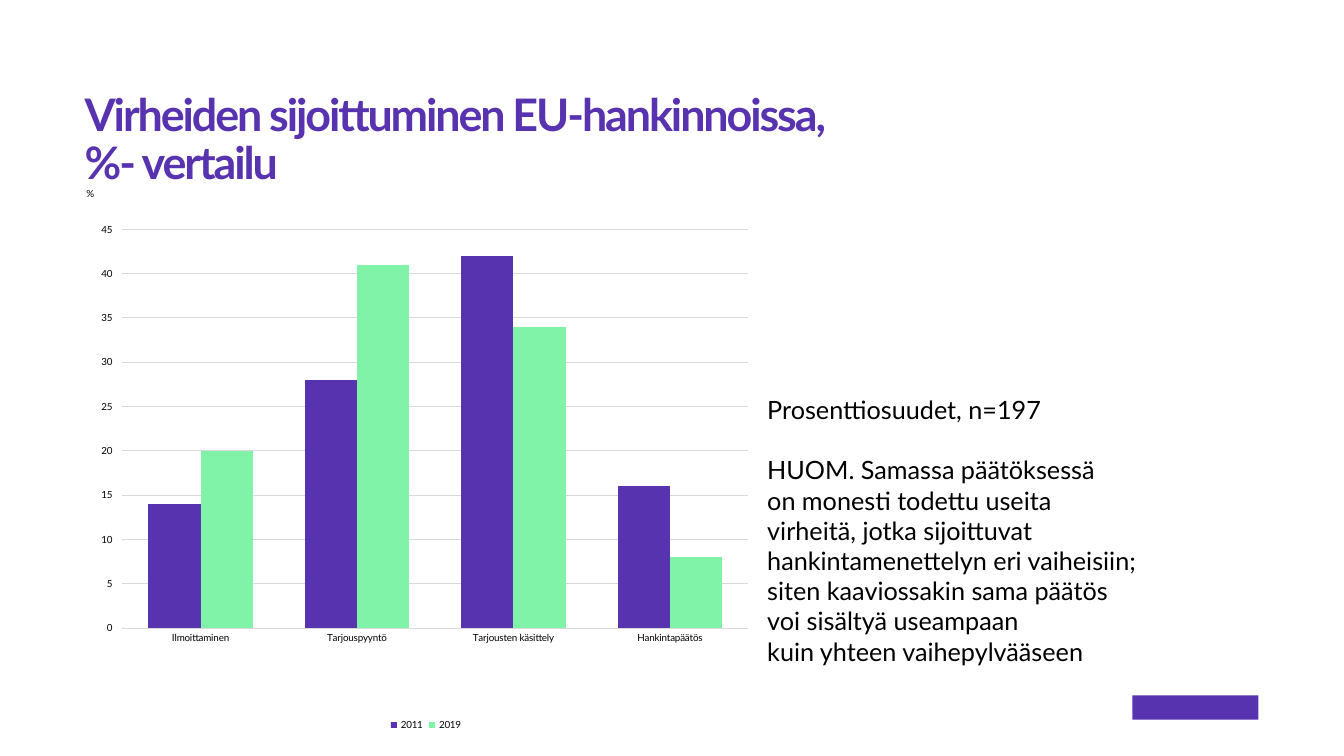
from dataclasses import dataclass

from lxml import etree
from pptx import Presentation
from pptx.chart.axis import _BaseAxis
from pptx.chart.chart import Chart
from pptx.chart.data import CategoryChartData
from pptx.dml.color import RGBColor
from pptx.enum.chart import XL_CHART_TYPE, XL_LEGEND_POSITION, XL_TICK_MARK
from pptx.enum.shapes import MSO_SHAPE
from pptx.enum.text import MSO_ANCHOR
from pptx.oxml.ns import qn
from pptx.slide import Slide
from pptx.text.text import Font
from pptx.util import Inches, Pt

COLUMNS = XL_CHART_TYPE.COLUMN_CLUSTERED
BOTTOM = XL_LEGEND_POSITION.BOTTOM
NO_TICK = XL_TICK_MARK.NONE
OUT_TICK = XL_TICK_MARK.OUTSIDE
RECT = MSO_SHAPE.RECTANGLE
TOP = MSO_ANCHOR.TOP


@dataclass(frozen=True)
class Theme:
    purple: RGBColor = RGBColor(0x57, 0x33, 0xAF)
    green: RGBColor = RGBColor(0x81, 0xF3, 0xA9)
    grey: RGBColor = RGBColor(0xD9, 0xD9, 0xD9)
    black: RGBColor = RGBColor(0, 0, 0)
    face: str = "Lato"
    title: float = 32
    body: float = 18
    small: float = 7


@dataclass(frozen=True)
class Box:
    left: float
    top: float
    width: float
    height: float

    def place(self) -> tuple[int, int, int, int]:
        return (Inches(self.left), Inches(self.top),
                Inches(self.width), Inches(self.height))


@dataclass(frozen=True)
class Text:
    box: Box
    paras: tuple[str, ...]
    size: float
    color: RGBColor
    bold: bool = False
    lines: float = 1.0
    track: int = 0
    gap: float = 0


@dataclass(frozen=True)
class Series:
    name: str
    vals: tuple[int, ...]
    color: RGBColor


THEME = Theme()
STAGES = ("Ilmoittaminen", "Tarjouspyyntö", "Tarjousten käsittely", "Hankintapäätös")
YEARS = (
    Series("2011", (14, 28, 42, 16), THEME.purple),
    Series("2019", (20, 41, 34, 8), THEME.green),
)
TEXTS = (
    Text(Box(0.84, 0.92, 11.97, 0.63),
         ("Virheiden sijoittuminen EU-hankinnoissa,\v%- vertailu",),
         THEME.title, THEME.purple, bold=True, lines=0.9, track=-150),
    Text(Box(7.61, 3.91, 5.43, 2.05),
         ("Prosenttiosuudet, n=197",
          "HUOM. Samassa päätöksessä\von monesti todettu useita\v"
          "virheitä, jotka sijoittuvat\vhankintamenettelyn eri vaiheisiin;\v"
          "siten kaaviossakin sama päätös\vvoi sisältyä useampaan\v"
          "kuin yhteen vaihepylvääseen"),
         THEME.body, THEME.black, gap=21.6),
)


def style(font: Font, size: float, color: RGBColor, bold: bool = False) -> None:
    font.name = THEME.face
    font.size = Pt(size)
    font.bold = bold
    font.color.rgb = color


def add_text(slide: Slide, item: Text) -> None:
    frame = slide.shapes.add_textbox(*item.box.place()).text_frame
    frame.word_wrap = True
    frame.vertical_anchor = TOP
    frame.margin_left = frame.margin_right = 0
    frame.margin_top = frame.margin_bottom = 0
    frame.text = "\n".join(item.paras)
    for index, para in enumerate(frame.paragraphs):
        para.line_spacing = item.lines
        if index:
            para.space_before = Pt(item.gap)
        for run in para.runs:
            style(run.font, item.size, item.color, item.bold)
            if item.track:
                run.font._element.set("spc", str(item.track))


def add_layout(parent: etree._Element, index: int, **parts: str | float) -> None:
    for old in parent.findall(qn("c:layout")):
        parent.remove(old)
    layout = etree.Element(qn("c:layout"))
    manual = etree.SubElement(layout, qn("c:manualLayout"))
    for name, val in parts.items():
        etree.SubElement(manual, qn(f"c:{name}")).set("val", str(val))
    parent.insert(index, layout)


def style_axis(axis: _BaseAxis, tick: XL_TICK_MARK) -> None:
    style(axis.tick_labels.font, THEME.small, THEME.black)
    axis.major_tick_mark = tick
    axis.minor_tick_mark = NO_TICK


def add_unit(chart: Chart) -> None:
    title = chart.value_axis.axis_title
    frame = title.text_frame
    frame.text = "%"
    style(frame.paragraphs[0].runs[0].font, THEME.small, THEME.black)
    body = title._element.find(".//" + qn("a:bodyPr"))
    body.set("rot", "0")
    body.set("vert", "horz")
    add_layout(title._element, 1, xMode="edge", yMode="edge", x=0, y=0.01)


def add_chart(slide: Slide, box: Box) -> None:
    data = CategoryChartData()
    data.categories = STAGES
    for year in YEARS:
        data.add_series(year.name, year.vals)
    chart = slide.shapes.add_chart(COLUMNS, *box.place(), data).chart
    style(chart.font, THEME.small, THEME.black)
    chart.has_title = False
    chart.has_legend = True
    chart.legend.position = BOTTOM
    chart.legend.include_in_layout = False
    style(chart.legend.font, THEME.small, THEME.black)

    plot = chart.plots[0]
    plot.vary_by_categories = False
    plot.gap_width = 100
    plot.overlap = 0
    for bars, year in zip(plot.series, YEARS):
        bars.format.fill.solid()
        bars.format.fill.fore_color.rgb = year.color

    style_axis(chart.category_axis, NO_TICK)
    style_axis(chart.value_axis, OUT_TICK)
    scale = chart.value_axis
    scale.minimum_scale, scale.maximum_scale, scale.major_unit = 0, 45, 5
    scale.has_major_gridlines = True
    scale.format.line.fill.background()
    for line in (chart.category_axis.format.line, scale.major_gridlines.format.line):
        line.color.rgb = THEME.grey
        line.width = Pt(0.75)
    add_unit(chart)
    add_layout(chart._chartSpace.find(".//" + qn("c:plotArea")), 0,
               layoutTarget="inner", xMode="edge", yMode="edge",
               x=0.055, y=0.09, w=0.917, h=0.718)


def add_mark(slide: Slide, box: Box) -> None:
    mark = slide.shapes.add_shape(RECT, *box.place())
    mark.shadow.inherit = False
    mark.fill.solid()
    mark.fill.fore_color.rgb = THEME.purple
    mark.line.fill.background()


def main() -> None:
    deck = Presentation()
    deck.slide_width = Inches(13.33)
    deck.slide_height = Inches(7.5)
    slide = deck.slides.add_slide(deck.slide_layouts[6])
    add_mark(slide, Box(11.23, 6.9, 1.25, 0.24))
    add_chart(slide, Box(0.84, 1.78, 6.77, 5.51))
    for item in TEXTS:
        add_text(slide, item)
    deck.save("out.pptx")


if __name__ == "__main__":
    main()
